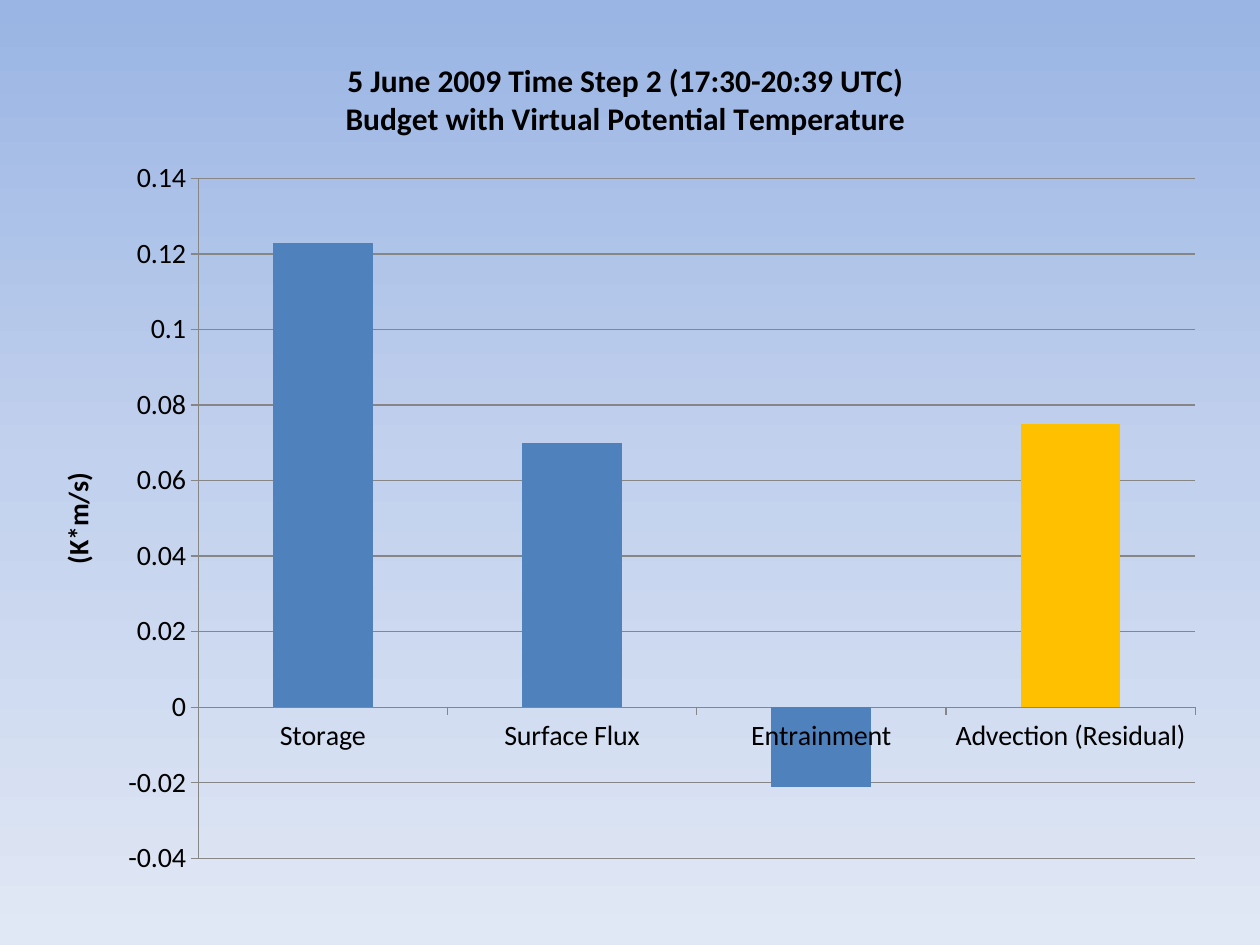
"""Build the slide with the virtual potential temperature budget chart."""
from copy import deepcopy

from lxml.etree import SubElement
from pptx import Presentation
from pptx.chart.data import CategoryChartData
from pptx.dml.color import RGBColor
from pptx.enum.chart import XL_CHART_TYPE, XL_TICK_MARK
from pptx.oxml.ns import qn
from pptx.util import Pt

PX = 914400 / 126
COLORS = {
    "top": "9AB5E4", "mid": "C2D1ED", "base": "E1E8F5",
    "bar": "4F81BD", "rest": "FFC000", "line": "868686", "text": "000000",
}


def tint(key):
    return RGBColor.from_string(COLORS[key])


def label(frame, text, size):
    frame.text = text
    for para in frame.paragraphs:
        for run in para.runs:
            run.font.name = "Calibri"
            run.font.size = Pt(size)
            run.font.bold = True
            run.font.color.rgb = tint("text")


prs = Presentation()
prs.slide_width = round(1260 * PX)
prs.slide_height = round(945 * PX)
slide = prs.slides.add_slide(prs.slide_layouts[6])

back = slide.background.fill
back.gradient()
back.gradient_angle = 270
stops = slide.element.find(".//" + qn("a:gsLst"))
stops.insert(1, deepcopy(stops[0]))
for stop, key, spot in zip(back.gradient_stops, ("top", "mid", "base"), (0, 0.5, 1)):
    stop.color.rgb = tint(key)
    stop.position = spot

data = CategoryChartData()
data.categories = ["Storage", "Surface Flux", "Entrainment", "Advection (Residual)"]
data.add_series("Series 1", (0.123, 0.07, -0.021, 0.075))
box = [round(n * PX) for n in (32, 32, 1187, 861)]
chart = slide.shapes.add_chart(XL_CHART_TYPE.COLUMN_CLUSTERED, *box, data).chart
chart.has_legend = False
chart.font.name = "Calibri"
chart.font.size = Pt(16)
chart.font.color.rgb = tint("text")
label(
    chart.chart_title.text_frame,
    "5 June 2009 Time Step 2 (17:30-20:39 UTC)\nBudget with Virtual Potential Temperature",
    18,
)
chart.chart_title.include_in_layout = False

plot = chart.plots[0]
plot.gap_width = 150
plot.vary_by_categories = False
bars = plot.series[0]
bars.invert_if_negative = False
for part, key in ((bars, "bar"), (bars.points[3], "rest")):
    part.format.fill.solid()
    part.format.fill.fore_color.rgb = tint(key)

cats, vals = chart.category_axis, chart.value_axis
vals.minimum_scale, vals.maximum_scale, vals.major_unit = -0.04, 0.14, 0.02
vals.has_major_gridlines = True
vals.tick_labels.number_format = "General"
vals.tick_labels.number_format_is_linked = False
label(vals.axis_title.text_frame, "(K*m/s)", 16)
for axis in (cats, vals):
    axis.major_tick_mark = XL_TICK_MARK.OUTSIDE
    axis.minor_tick_mark = XL_TICK_MARK.NONE
    axis.tick_labels.font.size = Pt(16)
for part in (cats, vals, vals.major_gridlines):
    part.format.line.color.rgb = tint("line")
    part.format.line.width = Pt(0.75)

area = chart.element.find(".//" + qn("c:plotArea"))
frame = area.find(qn("c:layout"))
if frame is None:
    frame = area.makeelement(qn("c:layout"))
    area.insert(0, frame)
manual = SubElement(frame, qn("c:manualLayout"))
for tag, val in (
    ("layoutTarget", "inner"), ("xMode", "edge"), ("yMode", "edge"),
    ("x", "0.14"), ("y", "0.17"), ("w", "0.84"), ("h", "0.79"),
):
    SubElement(manual, qn("c:" + tag)).set("val", val)

prs.save("out.pptx")
